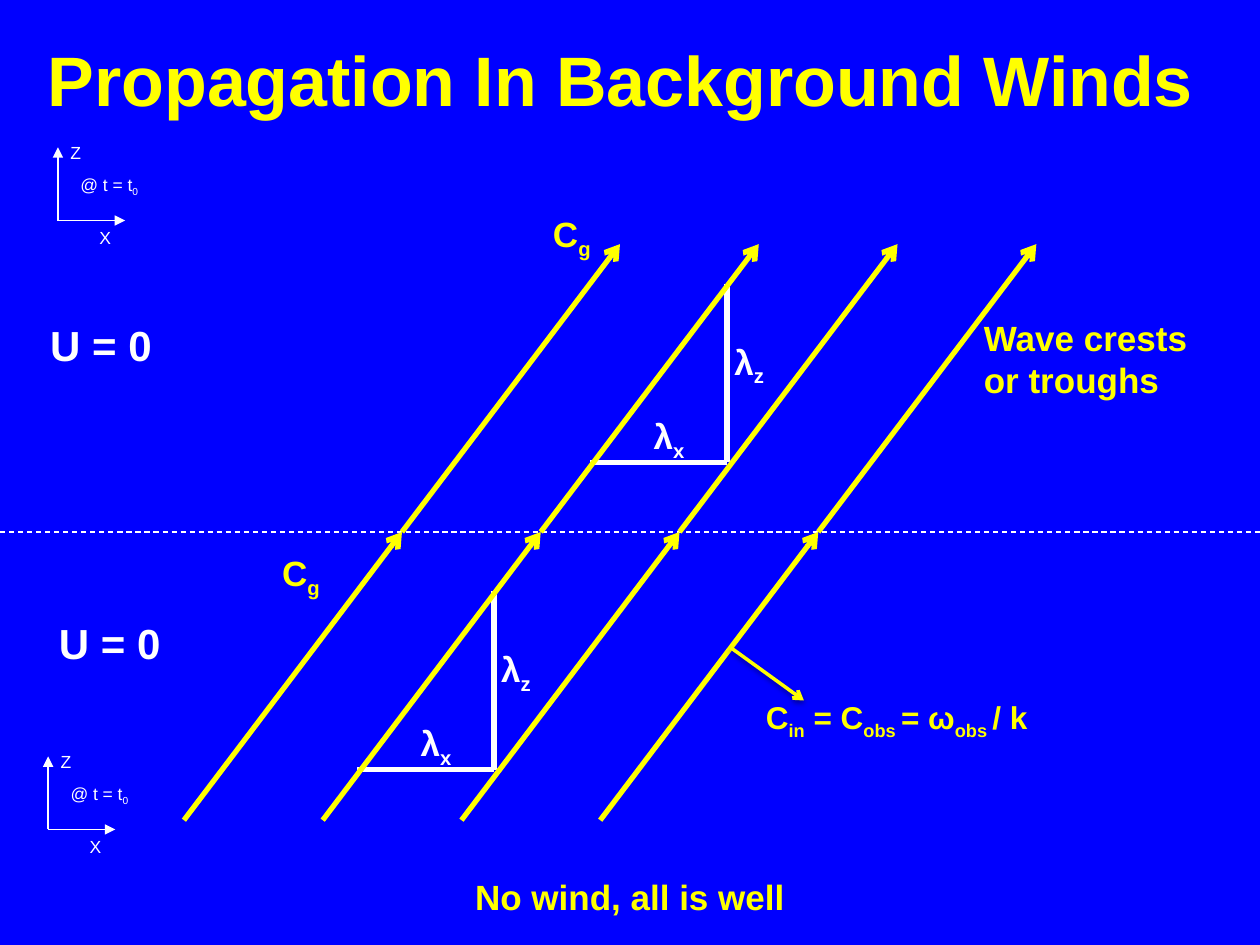
from pptx import Presentation
from pptx.dml.color import RGBColor
from pptx.enum.dml import MSO_LINE
from pptx.enum.shapes import MSO_CONNECTOR
from pptx.enum.text import MSO_ANCHOR, PP_ALIGN
from pptx.oxml.ns import qn
from pptx.util import Pt
from lxml.etree import SubElement

COLORS = {"blue": "0000FF", "yellow": "FFFF00", "white": "FFFFFF", "black": "000000"}
FONT = "Arial"

# Odd pieces between bars are subscripts: text, left, top, width, height, size, color, centred
LABELS = [
    ("Propagation In Background Winds", 8.64, 0, 692, 90, 40, "yellow", True),
    ("U = 0", 26.64, 349.2, 83.5, 36, 24, "white", False),
    ("U = 0", 21.6, 179.3, 83.5, 36, 24, "white", False),
    ("C|in| = C|obs |= ω|obs |/ k", 430.56, 395.3, 179.3, 28.8, 18, "yellow", False),
    ("No wind, all is well", 0, 496.8, 720, 31, 20, "yellow", True),
    ("C|g", 154.1, 311.8, 44, 31, 20, "yellow", False),
    ("C|g", 308.9, 118.1, 44, 31, 20, "yellow", False),
    ("Wave crests or troughs", 555.1, 177.1, 135.4, 55.4, 20, "yellow", False),
]

AXES_ORIGINS = [(33.12, 126), (27.5, 474)]
AXES_LABELS = [
    ("Z", 0, -48.2, 27.4, 19.4),
    ("X", 16.6, 0, 27.4, 19.4),
    ("@ t = t|0", 5.76, -30.2, 54.7, 19.4),
]

TRIANGLE_CORNERS = [(282.24, 439.9), (415.44, 264.2)]
TRIANGLE_WIDTH, TRIANGLE_HEIGHT = 78.5, 102.2
TRIANGLE_LABELS = [("λ|x", -49, -31, 41.8, 31), ("λ|z", -2.9, -73.4, 46.8, 31)]

CREST_COUNT, CREST_GAP = 4, 79.3
CREST_START_X, CREST_RUN = 105.1, 124.6
CREST_LEVELS = [468.7, 304, 139.5]


def rgb(name):
    return RGBColor.from_string(COLORS[name])


def add_label(shapes, text, left, top, width, height, size, color, centred=False, bold=True):
    box = shapes.add_textbox(Pt(left), Pt(top), Pt(width), Pt(height))
    frame = box.text_frame
    frame.word_wrap = True
    frame.vertical_anchor = MSO_ANCHOR.MIDDLE if size == 40 else MSO_ANCHOR.TOP
    para = frame.paragraphs[0]
    para.alignment = PP_ALIGN.CENTER if centred else PP_ALIGN.LEFT
    for index, piece in enumerate(text.split("|")):
        span = para.add_run()
        span.text = piece
        span.font.name, span.font.size, span.font.bold = FONT, Pt(size), bold
        span.font.color.rgb = rgb(color)
        if index % 2:
            span.font._element.set("baseline", "-25000")


def add_line(shapes, start, end, color, width, arrow=None, dash=None, shadow=False):
    line = shapes.add_connector(MSO_CONNECTOR.STRAIGHT, *map(Pt, start + end))
    line.line.color.rgb = rgb(color)
    line.line.width = Pt(width)
    if dash:
        line.line.dash_style = dash
    properties = line._element.spPr
    if arrow:
        SubElement(properties.find(qn("a:ln")), qn("a:tailEnd"), type=arrow)
    effects = SubElement(properties, qn("a:effectLst"))
    if shadow:
        outer = SubElement(effects, qn("a:outerShdw"), blurRad=str(Pt(3.1)),
                           dist=str(Pt(1.6)), dir="5400000", rotWithShape="0")
        shade = SubElement(outer, qn("a:srgbClr"), val=COLORS["black"])
        SubElement(shade, qn("a:alpha"), val="38000")


def add_axes(page, x, y):
    shapes = page.shapes.add_group_shape().shapes
    for end in [(x, y - 41.8), (x + 38.4, y)]:
        add_line(shapes, (x, y), end, "white", 0.75, "triangle")
    for text, dx, dy, width, height in AXES_LABELS:
        add_label(shapes, text, x + dx, y + dy, width, height, 10, "white", bold=False)


def add_triangle(page, x, y):
    shapes = page.shapes.add_group_shape().shapes
    for end in [(x - TRIANGLE_WIDTH, y), (x, y - TRIANGLE_HEIGHT)]:
        add_line(shapes, (x, y), end, "white", 3)
    for text, dx, dy, width, height in TRIANGLE_LABELS:
        add_label(shapes, text, x + dx, y + dy, width, height, 20, "white")


def main():
    deck = Presentation()
    deck.slide_width, deck.slide_height = Pt(720), Pt(540)
    page = deck.slides.add_slide(deck.slide_layouts[6])
    page.background.fill.solid()
    page.background.fill.fore_color.rgb = rgb("blue")

    add_line(page.shapes, (0, 304), (720, 304), "white", 0.75, dash=MSO_LINE.DASH)
    for origin in AXES_ORIGINS:
        add_axes(page, *origin)
    for corner in TRIANGLE_CORNERS:
        add_triangle(page, *corner)
    for level, (bottom, top) in enumerate(zip(CREST_LEVELS, CREST_LEVELS[1:])):
        for crest in range(CREST_COUNT):
            x = CREST_START_X + crest * CREST_GAP + level * CREST_RUN
            add_line(page.shapes, (x, bottom), (x + CREST_RUN, top), "yellow", 3, "arrow")
    add_line(page.shapes, (417.6, 370.1), (459.4, 400.3), "yellow", 2, "arrow", shadow=True)
    for label in LABELS:
        add_label(page.shapes, *label)

    deck.save("out.pptx")


if __name__ == "__main__":
    main()
